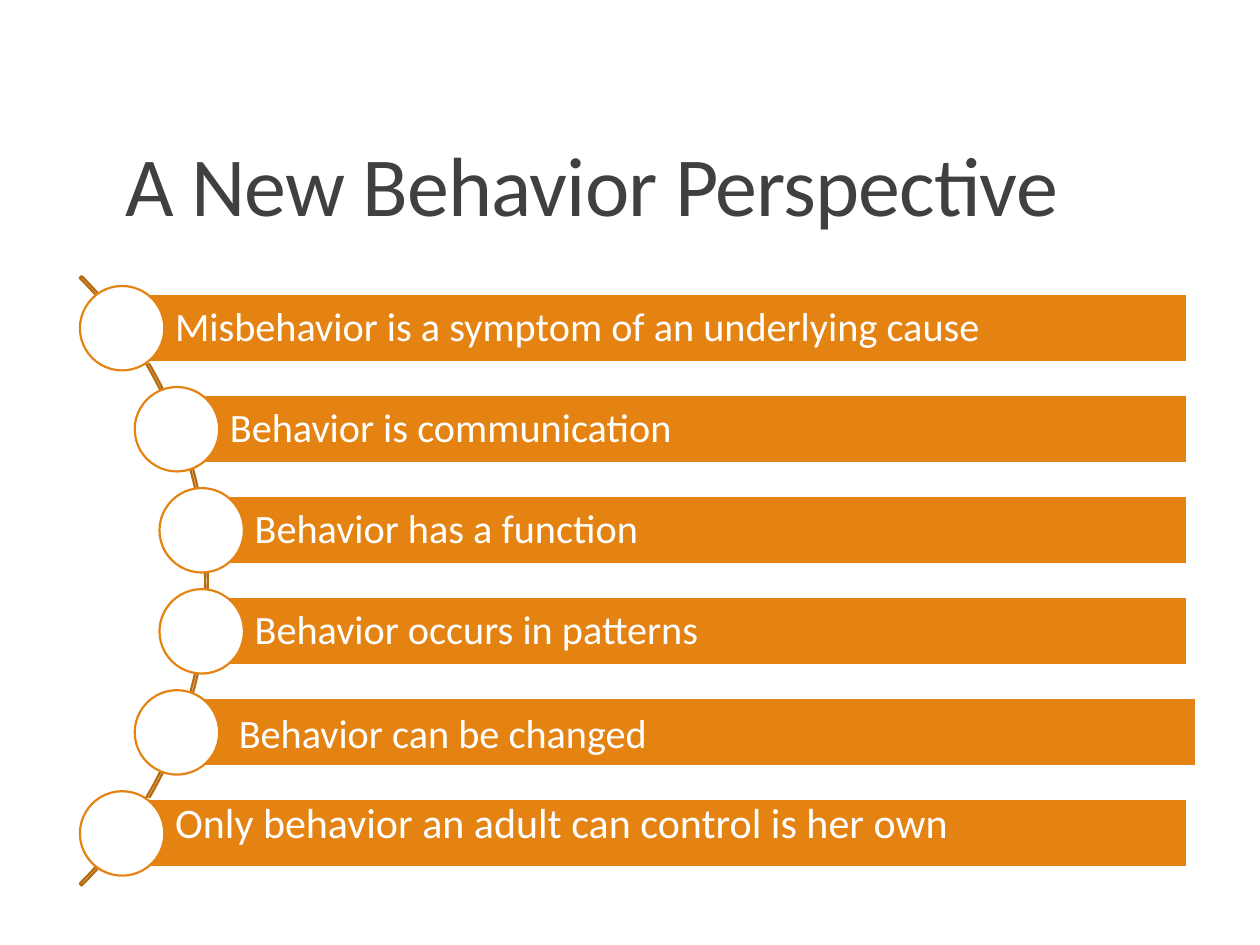
from dataclasses import dataclass
from math import sqrt

from pptx import Presentation
from pptx.dml.color import RGBColor
from pptx.enum.shapes import MSO_SHAPE
from pptx.enum.text import MSO_ANCHOR, PP_ALIGN
from pptx.shapes.autoshape import Shape
from pptx.slide import Slide
from pptx.text.text import TextFrame
from pptx.util import Inches, Pt

ARC, RECT, OVAL = MSO_SHAPE.BLOCK_ARC, MSO_SHAPE.RECTANGLE, MSO_SHAPE.OVAL
LEFT, MIDDLE, BOTTOM = PP_ALIGN.LEFT, MSO_ANCHOR.MIDDLE, MSO_ANCHOR.BOTTOM


@dataclass(frozen=True)
class Theme:
    font: str = "Calibri"
    ink: str = "404040"
    bar: str = "E48312"
    arc: str = "B7690E"
    white: str = "FFFFFF"
    title: float = 48
    line: float = 1.25


@dataclass(frozen=True)
class Item:
    text: str
    size: float = 23
    space: float = 0.9
    shift: float = 0
    foot: float = 0.06


@dataclass(frozen=True)
class Ring:
    x: float = -1.77
    y: float = 4.61
    outer: float = 3.42
    track: float = 3.395
    pitch: float = 0.802
    dot: float = 0.67
    bar: float = 0.54
    right: float = 9.42


THEME = Theme()
RING = Ring()
ITEMS = [
    Item("Misbehavior is a symptom of an underlying cause"),
    Item("Behavior is communication"),
    Item("Behavior has a function"),
    Item("Behavior occurs in patterns"),
    Item("Behavior can be changed", space=1, shift=0.07),
    Item("Only behavior an adult can control is her own", 24, 1, foot=0.25),
]


def add_shape(slide: Slide, kind: int, x: float, y: float, wide: float,
              high: float, line: str, fill: str | None = None) -> Shape:
    shape = slide.shapes.add_shape(
        kind, Inches(x), Inches(y), Inches(wide), Inches(high))
    shape.shadow.inherit = False
    if fill:
        shape.fill.solid()
        shape.fill.fore_color.rgb = RGBColor.from_string(fill)
    else:
        shape.fill.background()
    shape.line.color.rgb = RGBColor.from_string(line)
    shape.line.width = Pt(THEME.line)
    return shape


def set_text(frame: TextFrame, text: str, size: float, color: str,
             space: float, anchor: int) -> None:
    frame.text = text
    frame.word_wrap = True
    frame.vertical_anchor = anchor
    para = frame.paragraphs[0]
    para.alignment = LEFT
    para.line_spacing = space
    font = para.runs[0].font
    font.name = THEME.font
    font.size = Pt(size)
    font.color.rgb = RGBColor.from_string(color)


def add_title(slide: Slide, text: str) -> None:
    box = slide.shapes.add_textbox(
        Inches(0.9), Inches(0.31), Inches(8.25), Inches(1.59))
    set_text(box.text_frame, text, THEME.title, THEME.ink, 0.85, BOTTOM)
    run = box.text_frame.paragraphs[0].runs[0]
    run.font._element.set("spc", "-50")


def add_arc(slide: Slide) -> None:
    span = 2 * RING.outer
    arc = add_shape(slide, ARC, RING.x - RING.outer, RING.y - RING.outer,
                    span, span, THEME.arc)
    for i, value in enumerate((189, 27, 0.00316)):
        arc.adjustments[i] = value


def add_item(slide: Slide, item: Item, row: int) -> None:
    rise = (row - (len(ITEMS) - 1) / 2) * RING.pitch
    x = RING.x + sqrt(RING.track ** 2 - rise ** 2)
    y = RING.y + rise
    bar = add_shape(slide, RECT, x + item.shift, y - RING.bar / 2,
                    RING.right - x, RING.bar, THEME.white, THEME.bar)
    frame = bar.text_frame
    frame.margin_left = Inches(0.42)
    frame.margin_top = frame.margin_right = Inches(0.06)
    frame.margin_bottom = Inches(item.foot)
    set_text(frame, item.text, item.size, THEME.white, item.space, MIDDLE)
    half = RING.dot / 2
    add_shape(slide, OVAL, x - half, y - half, RING.dot, RING.dot,
              THEME.bar, THEME.white)


def main() -> None:
    deck = Presentation()
    deck.slide_width, deck.slide_height = Inches(10), Inches(7.5)
    slide = deck.slides.add_slide(deck.slide_layouts[6])
    add_title(slide, "A New Behavior Perspective")
    add_arc(slide)
    for row, item in enumerate(ITEMS):
        add_item(slide, item, row)
    deck.save("out.pptx")


if __name__ == "__main__":
    main()
